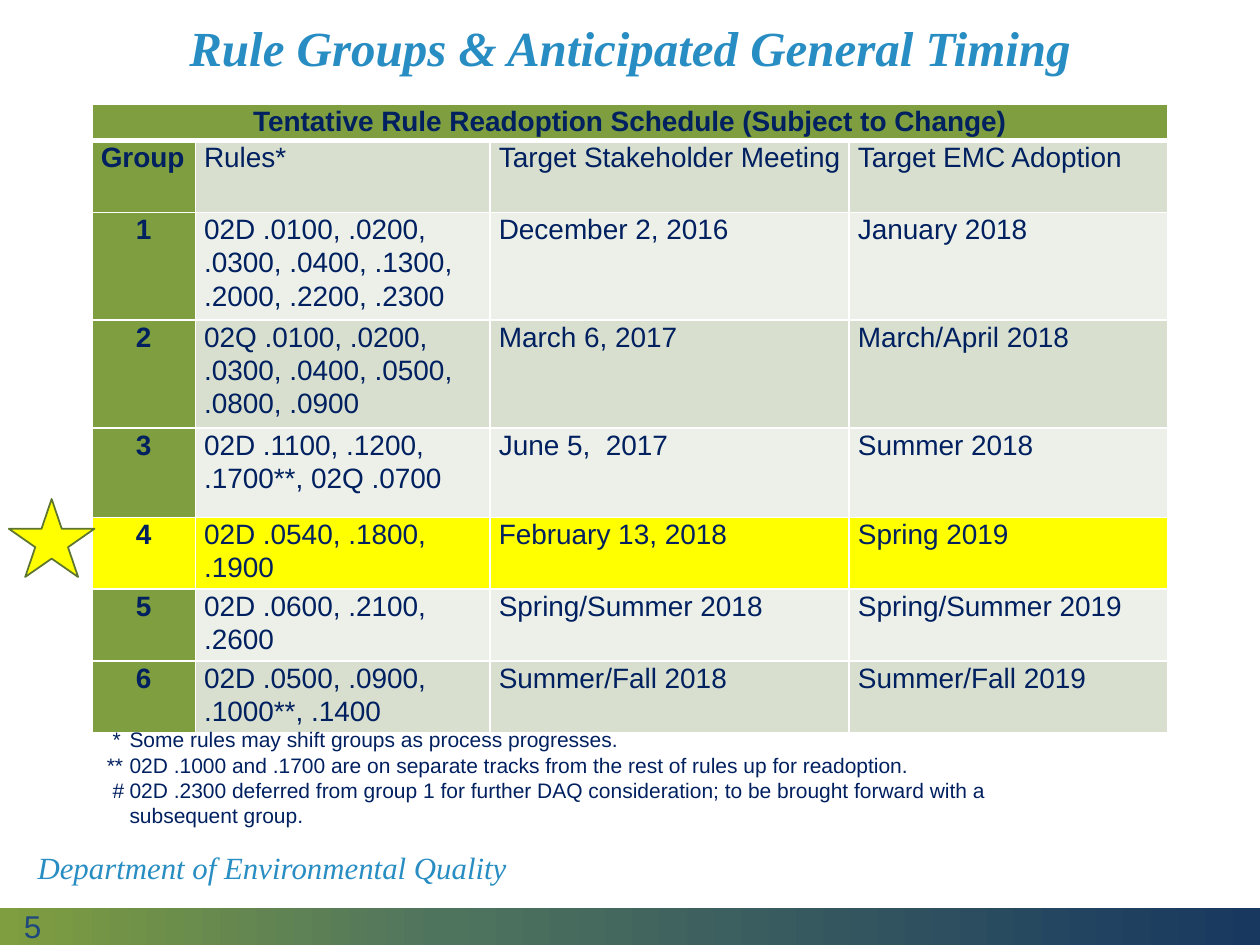
from pptx import Presentation
from pptx.dml.color import RGBColor
from pptx.enum.shapes import MSO_SHAPE
from pptx.enum.text import MSO_ANCHOR, PP_ALIGN
from pptx.oxml import parse_xml
from pptx.oxml.ns import nsdecls
from pptx.util import Inches, Pt

COLORS = {
    "green": "7F9E3F", "teal": "4F745E", "deep": "183860",
    "band_dark": "D8DFCF", "band_light": "ECF0E8", "highlight": "FFFF00",
    "navy": "002060", "heading": "288DC2", "number": "1F497D",
    "star_line": "5E752F", "white": "FFFFFF",
}

TITLE = "Rule Groups & Anticipated General Timing"
DEPARTMENT = "Department of Environmental Quality"
PAGE = "5"
CAPTION = "Tentative Rule Readoption Schedule (Subject to Change)"
SCHEDULE = [
    ("Group", "Rules*", "Target Stakeholder Meeting", "Target EMC Adoption"),
    ("1", "02D .0100, .0200, .0300, .0400, .1300, .2000, .2200, .2300",
     "December 2, 2016", "January 2018"),
    ("2", "02Q .0100, .0200, .0300, .0400, .0500, .0800, .0900",
     "March 6, 2017", "March/April 2018"),
    ("3", "02D .1100, .1200, .1700**, 02Q .0700", "June 5,  2017", "Summer 2018"),
    ("4", "02D .0540, .1800, .1900", "February 13, 2018", "Spring 2019"),
    ("5", "02D .0600, .2100,  .2600", "Spring/Summer 2018", "Spring/Summer 2019"),
    ("6", "02D .0500, .0900, .1000**, .1400", "Summer/Fall 2018", "Summer/Fall 2019"),
]
CURRENT_GROUP = "4"
COLUMN_WIDTHS = [0.82, 2.34, 2.85, 2.53]
ROW_HEIGHTS = [0.28, 0.57, 0.85, 0.85, 0.71, 0.57, 0.57, 0.57]
FOOTNOTES = [
    (" *", "Some rules may shift groups as process progresses."),
    ("**", "02D .1000 and .1700 are on separate tracks from the rest of rules up for readoption."),
    (" #", "02D .2300 deferred from group 1 for further DAQ consideration; "
           "to be brought forward with a subsequent group."),
]


def rgb(name):
    return RGBColor.from_string(COLORS[name])


def style(paragraph, size, color, face="Arial", bold=False, italic=False):
    font = paragraph.font
    font.size, font.name, font.bold, font.italic = Pt(size), face, bold, italic
    font.color.rgb = rgb(color)


def add_text_frame(slide, box, anchor=MSO_ANCHOR.MIDDLE):
    frame = slide.shapes.add_textbox(*map(Inches, box)).text_frame
    frame.word_wrap = True
    frame.vertical_anchor = anchor
    return frame


def add_line(slide, box, text, size, color, spacing=1.0, align=PP_ALIGN.LEFT, **look):
    paragraph = add_text_frame(slide, box).paragraphs[0]
    paragraph.text = text
    paragraph.line_spacing = spacing
    paragraph.alignment = align
    style(paragraph, size, color, **look)


def add_band(slide):
    band = slide.shapes.add_shape(MSO_SHAPE.RECTANGLE, *map(Inches, (0, 7.21, 10, 0.3)))
    band.shadow.inherit = False
    band.line.fill.background()
    stops = "".join(
        f'<a:gs pos="{percent * 1000}"><a:srgbClr val="{COLORS[name]}"/></a:gs>'
        for percent, name in ((0, "green"), (35, "teal"), (100, "deep")))
    gradient = parse_xml(f'<a:gradFill {nsdecls("a")} rotWithShape="1"><a:gsLst>{stops}</a:gsLst>'
                         '<a:lin ang="0" scaled="0"/></a:gradFill>')
    band.fill.background()
    no_fill = band.element.spPr.find("{*}noFill")
    band.element.spPr.replace(no_fill, gradient)


def set_borders(cell, **widths):
    for side in "LRTB":
        width = Pt(widths.get(side, 1))
        cell._tc.get_or_add_tcPr().append(parse_xml(
            f'<a:ln{side} {nsdecls("a")} w="{width}"><a:solidFill>'
            f'<a:srgbClr val="{COLORS["white"]}"/></a:solidFill></a:ln{side}>'))


def cell_color(row, column, group):
    if group == CURRENT_GROUP:
        return "highlight"
    if row == 0 or column == 0:
        return "green"
    return "band_dark" if row % 2 else "band_light"


def add_schedule(slide):
    rows = [(CAPTION, "", "", "")] + SCHEDULE
    table = slide.shapes.add_table(
        len(rows), len(COLUMN_WIDTHS), Inches(0.73), Inches(0.83),
        Inches(sum(COLUMN_WIDTHS)), Inches(sum(ROW_HEIGHTS))).table
    for column, width in zip(table.columns, COLUMN_WIDTHS):
        column.width = Inches(width)
    for row, height in zip(table.rows, ROW_HEIGHTS):
        row.height = Inches(height)
    table.cell(0, 0).merge(table.cell(0, len(COLUMN_WIDTHS) - 1))

    for r, texts in enumerate(rows):
        for c, text in enumerate(texts):
            cell = table.cell(r, c)
            cell.margin_left = cell.margin_right = Inches(0.07)
            cell.margin_top = cell.margin_bottom = 0
            set_borders(cell, T=3 if r == 1 else 1, B=3 if r == 0 else 1)
            cell.fill.solid()
            cell.fill.fore_color.rgb = rgb(cell_color(r, c, texts[0]))
            paragraph = cell.text_frame.paragraphs[0]
            paragraph.text = text
            paragraph.line_spacing = 1.07
            if c == 0 and r != 1:
                paragraph.alignment = PP_ALIGN.CENTER
            style(paragraph, 16, "navy", bold=c == 0)


def add_footnotes(slide):
    frame = add_text_frame(slide, (0.75, 5.72, 7.7, 1.41), MSO_ANCHOR.TOP)
    for i, (mark, note) in enumerate(FOOTNOTES):
        paragraph = frame.paragraphs[0] if i == 0 else frame.add_paragraph()
        paragraph.text = f"{mark}\t{note}"
        properties = paragraph._p.get_or_add_pPr()
        properties.set("marL", str(Inches(0.18)))
        properties.set("indent", str(-Inches(0.18)))
        style(paragraph, 12, "navy")


def add_star(slide):
    star = slide.shapes.add_shape(MSO_SHAPE.STAR_5_POINT, *map(Inches, (0.07, 3.96, 0.68, 0.62)))
    star.shadow.inherit = False
    star.fill.solid()
    star.fill.fore_color.rgb = rgb("highlight")
    star.line.color.rgb = rgb("star_line")
    star.line.width = Pt(1)


def main():
    deck = Presentation()
    deck.slide_width, deck.slide_height = Inches(10), Inches(7.5)
    slide = deck.slides.add_slide(deck.slide_layouts[6])

    # Frame: bottom band, title, page number, department
    add_band(slide)
    add_line(slide, (0.69, -0.18, 8.62, 1.16), TITLE, 28, "heading", 0.9, PP_ALIGN.CENTER,
             face="Times New Roman", bold=True, italic=True)
    add_line(slide, (0.09, 7.27, 2.25, 0.15), PAGE, 18, "number")
    add_line(slide, (0.2, 6.7, 4.1, 0.4), DEPARTMENT, 17.6, "heading", 0.9,
             face="Times New Roman", italic=True)

    # Schedule with its notes and the marker of the current group
    add_schedule(slide)
    add_footnotes(slide)
    add_star(slide)

    deck.save("out.pptx")


if __name__ == "__main__":
    main()
